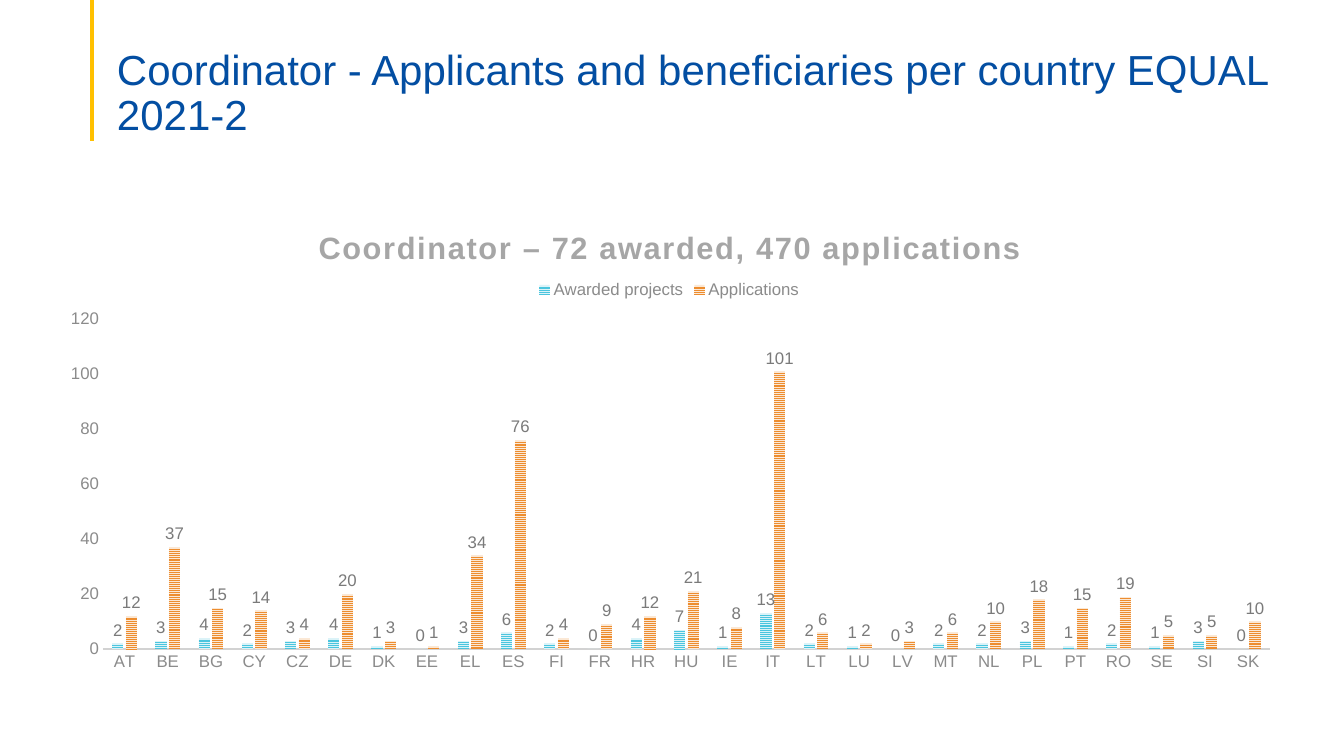
from lxml import etree
from pptx import Presentation
from pptx import util as u
from pptx.chart.data import CategoryChartData
from pptx.dml.color import RGBColor
from pptx.enum import chart as charts, dml, shapes, text
from pptx.oxml import ns

PX = 12192000 / 1344
FONT = "Arial"
COLORS = {
    "heading": "034EA2", "accent": "FFC000", "caption": "A6A6A6",
    "axis_text": "8B8B8B", "axis_line": "D2D2D2", "value": "7A7A7A", "base": "4D4D4D",
    "awarded": "4BC5DE", "awarded_back": "DBF3F8",
    "applied": "ED8D2F", "applied_back": "FBE8D5",
}
COUNTRIES = ("AT BE BG CY CZ DE DK EE EL ES FI FR HR HU IE IT LT LU LV MT "
             "NL PL PT RO SE SI SK").split()
AWARDED = [2, 3, 4, 2, 3, 4, 1, 0, 3, 6, 2, 0, 4, 7, 1, 13, 2, 1, 0, 2,
           2, 3, 1, 2, 1, 3, 0]
APPLICATIONS = [12, 37, 15, 14, 4, 20, 3, 1, 34, 76, 4, 9, 12, 21, 8, 101, 6, 2, 3, 6,
                10, 18, 15, 19, 5, 5, 10]


def px(length):
    return u.Emu(round(length * PX))


def color(name):
    return RGBColor.from_string(COLORS[name])


def style_font(font, size, name):
    font.name = FONT
    font.size = u.Pt(size)
    font.color.rgb = color(name)


def place(element, index, box, **offsets):
    for old in element.findall(ns.qn("c:layout")):
        element.remove(old)
    layout = etree.Element(ns.qn("c:layout"))
    manual = etree.SubElement(layout, ns.qn("c:manualLayout"))
    if "w" in offsets:
        etree.SubElement(manual, ns.qn("c:layoutTarget"), val="inner")
    for side in ("x", "y"):
        etree.SubElement(manual, ns.qn(f"c:{side}Mode"), val="edge")
    for side, length in offsets.items():
        whole = box[2] if side in "xw" else box[3]
        etree.SubElement(manual, ns.qn(f"c:{side}"), val=f"{length / whole:.4f}")
    element.insert(index, layout)


def add_heading(slide, box):
    left, top, width, height = box
    rule = slide.shapes.add_connector(
        shapes.MSO_CONNECTOR.STRAIGHT, px(left), px(top), px(left), px(top + height))
    rule.line.color.rgb = color("accent")
    rule.line.width = u.Pt(2.25)
    etree.SubElement(rule.element.spPr, ns.qn("a:effectLst"))

    heading = slide.shapes.title
    heading.left, heading.top = px(left + 15), px(top + 53)
    heading.width, heading.height = px(width - 15), px(height - 54)
    frame = heading.text_frame
    frame.text = "Coordinator - Applicants and beneficiaries per country EQUAL 2021-2"
    frame.word_wrap = True
    frame.auto_size = text.MSO_AUTO_SIZE.NONE
    frame.vertical_anchor = text.MSO_ANCHOR.BOTTOM
    frame.margin_left = frame.margin_right = px(10)
    frame.margin_top, frame.margin_bottom = px(5), 0
    paragraph = frame.paragraphs[0]
    paragraph.alignment = text.PP_ALIGN.LEFT
    paragraph.line_spacing = 0.9
    style_font(paragraph.font, 30, "heading")


def style_axes(chart):
    countries, counts = chart.category_axis, chart.value_axis
    for axis in (countries, counts):
        axis.has_major_gridlines = False
        axis.major_tick_mark = axis.minor_tick_mark = charts.XL_TICK_MARK.NONE
        style_font(axis.tick_labels.font, 12, "axis_text")
    countries.format.line.color.rgb = color("axis_line")
    countries.format.line.width = u.Pt(1.5)
    counts.format.line.fill.background()
    counts.minimum_scale, counts.maximum_scale, counts.major_unit = 0, 120, 20


def style_columns(plot):
    plot.vary_by_categories = False
    plot.gap_width, plot.overlap = 164, -22
    for series, name in zip(plot.series, ("awarded", "applied")):
        fill = series.format.fill
        fill.patterned()
        fill.pattern = dml.MSO_PATTERN.NARROW_HORIZONTAL
        fill.fore_color.rgb = color(name)
        fill.back_color.rgb = color(name + "_back")
        series.format.line.fill.background()
        labels = series.data_labels
        labels.show_value = True
        labels.position = charts.XL_LABEL_POSITION.OUTSIDE_END
        style_font(labels.font, 12, "value")


def add_country_chart(slide, box):
    data = CategoryChartData(number_format="General")
    data.categories = COUNTRIES
    data.add_series("Awarded projects", AWARDED)
    data.add_series("Applications", APPLICATIONS)
    chart = slide.shapes.add_chart(
        charts.XL_CHART_TYPE.COLUMN_CLUSTERED, *map(px, box), data).chart
    style_font(chart.font, 10, "base")

    chart.has_title = True
    caption = chart.chart_title.text_frame
    caption.text = "Coordinator – 72 awarded, 470 applications"
    paragraph = caption.paragraphs[0]
    style_font(paragraph.font, 22, "caption")
    paragraph.font.bold = True
    paragraph.runs[0].font._element.set("spc", "130")
    paragraph.font._element.set("spc", "130")

    chart.has_legend = True
    chart.legend.position = charts.XL_LEGEND_POSITION.TOP
    chart.legend.include_in_layout = False
    style_font(chart.legend.font, 12, "axis_text")

    style_axes(chart)
    style_columns(chart.plots[0])

    root = chart._chartSpace.chart
    place(root.find(ns.qn("c:title")), 1, box, x=268, y=21)
    place(root.find(ns.qn("c:legend")), 1, box, x=489, y=75)
    place(root.plotArea, 0, box, x=58, y=117, w=1167, h=330)


def main():
    deck = Presentation()
    deck.slide_width, deck.slide_height = px(1344), px(756)
    slide = deck.slides.add_slide(deck.slide_layouts[5])
    add_heading(slide, (92, 0, 1252, 141))
    add_country_chart(slide, (45, 202, 1249, 480))
    deck.save("out.pptx")


if __name__ == "__main__":
    main()
